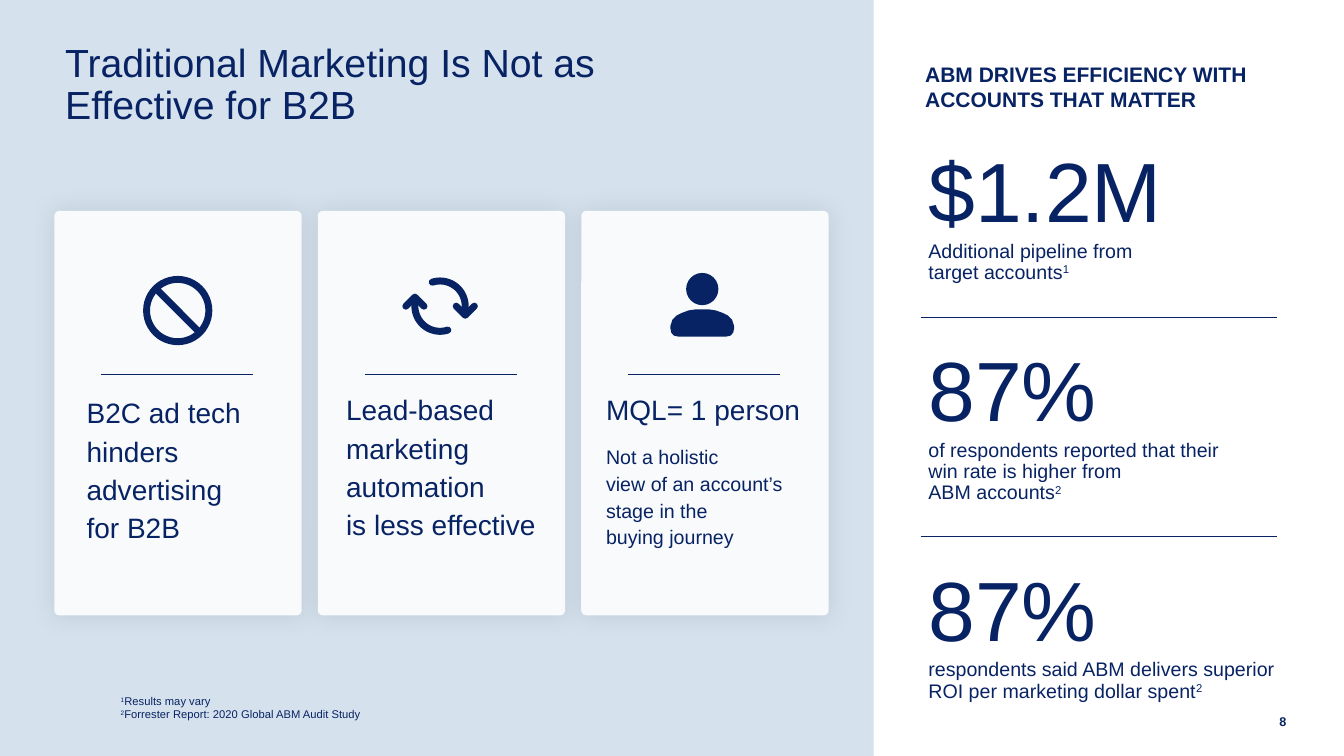
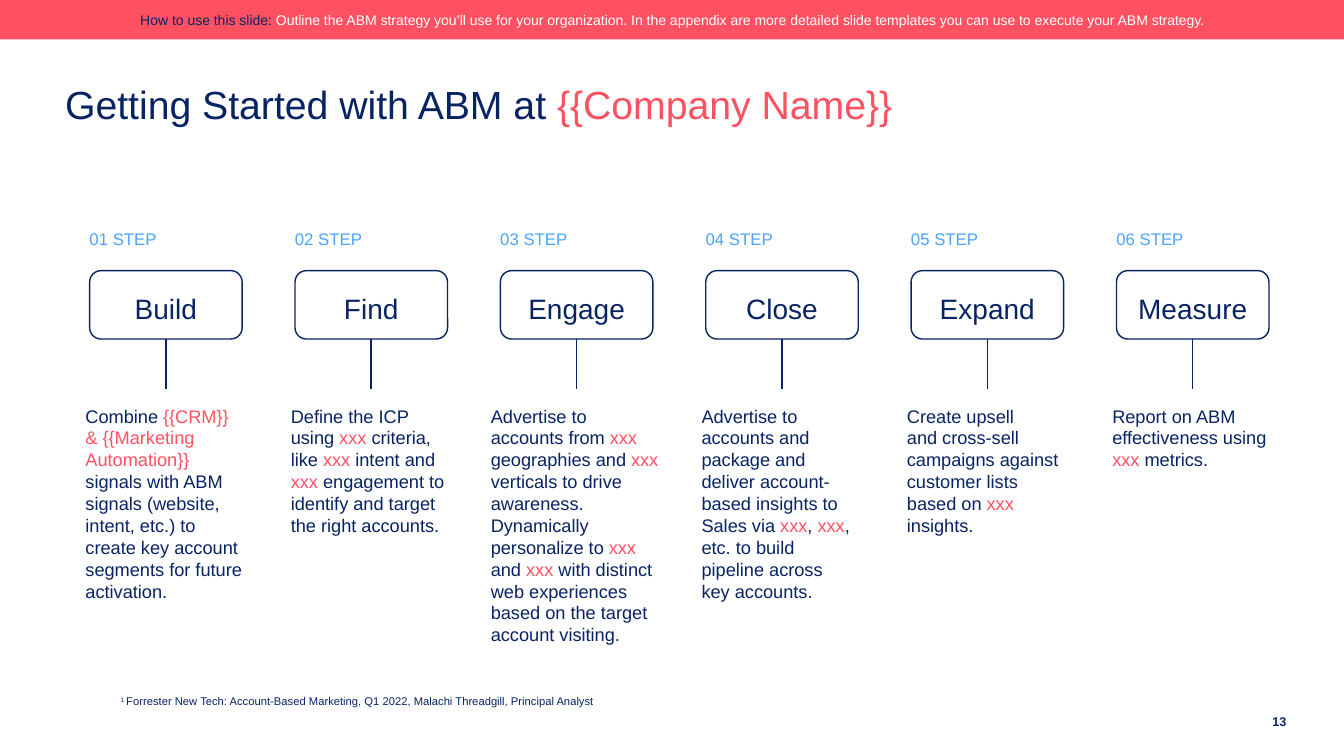
import math
import pptx
import pptx.util
import pptx.dml.color
import pptx.enum.shapes
import pptx.enum.text
import pptx.oxml

Pt = pptx.util.Pt
RGB = pptx.dml.color.RGBColor.from_string
Kind = pptx.enum.shapes.MSO_SHAPE
Align = pptx.enum.text.PP_ALIGN
Anchor = pptx.enum.text.MSO_ANCHOR

HUES = {
    "navy": "082364",
    "coral": "FF5161",
    "sky": "4CA3FF",
    "mist": "D5E1EC",
    "card": "F8FAFC",
    "white": "FFFFFF",
    "shade": "253E57",
}
FONT = "Arial"
NS = 'xmlns:a="http://schemas.openxmlformats.org/drawingml/2006/main"'

deck = pptx.Presentation()
deck.slide_width = pptx.util.Inches(13.33)
deck.slide_height = pptx.util.Inches(7.5)
COL = deck.slide_width / 100
ROW = deck.slide_height / 100


def add(page, kind, x, y, w, h, fill=None, line=None):
    x, w = round(x * COL), round(w * COL)
    y, h = round(y * ROW), round(h * ROW)
    if kind == "text":
        return page.shapes.add_textbox(x, y, w, h)
    if kind == "line":
        rule = page.shapes.add_connector(
            pptx.enum.shapes.MSO_CONNECTOR.STRAIGHT, x, y, x + w, y + h)
        rule._element.spPr.append(pptx.oxml.parse_xml(f"<a:effectLst {NS}/>"))
        rule.line.color.rgb = RGB(HUES["navy"])
        rule.line.width = Pt(line)
        return rule
    shape = page.shapes.add_shape(kind, x, y, w, h)
    shape.shadow.inherit = False
    shape.fill.solid()
    shape.fill.fore_color.rgb = RGB(HUES[fill])
    if line:
        shape.line.color.rgb = RGB(HUES["navy"])
        shape.line.width = Pt(line)
    else:
        shape.line.fill.background()
    return shape


def write(text, box, size=14, hue="navy", alt="coral", bold=False, align=Align.LEFT,
          anchor=Anchor.TOP, ins=(7.2, 3.6, 7.2, 3.6), space=1.0, before=0, after=0):
    frame = box.text_frame
    frame.word_wrap = True
    frame.auto_size = pptx.enum.text.MSO_AUTO_SIZE.NONE
    frame.vertical_anchor = anchor
    frame.margin_left, frame.margin_top, frame.margin_right, frame.margin_bottom = map(Pt, ins)
    para = frame.add_paragraph() if frame.text else frame.paragraphs[0]
    para.alignment = align
    para.line_spacing = space
    para.space_before, para.space_after = Pt(before), Pt(after)
    for i, part in enumerate(text.split("|")):
        for j, words in enumerate(part.split("\n")):
            if j:
                para.add_line_break()
            if not words:
                continue
            run = para.add_run()
            run.text = words
            font = run.font
            font.name, font.size, font.bold = FONT, Pt(size), bold
            font.color.rgb = RGB(HUES[alt if i % 2 and alt != "sup" else hue])
            if i % 2 and alt == "sup":
                font._element.set("baseline", "30000")


EVEN = (7.2,) * 4
WIDE = (9.4,) * 4

PAGES = [
    ("Traditional Marketing Is Not as Effective for B2B", 42.4, "8",
     ["|1|Results may vary", "|2|Forrester Report: 2020 Global ABM Audit Study"]),
    ("Getting Started with ABM at |{{Company Name}}", 88.5, "13",
     ["|1 |Forrester New Tech: Account-Based Marketing, Q1 2022, "
      "Malachi Threadgill, Principal Analyst"]),
]
pages = []
for title, width, num, notes in PAGES:
    page = deck.slides.add_slide(deck.slide_layouts[5])
    pages.append(page)
    head = page.shapes.title
    head.left, head.top = round(4.1 * COL), round(1.6 * ROW)
    head.width, head.height = round(width * COL), round(16.7 * ROW)
    write(title, head, size=28, space=0.9, anchor=Anchor.BOTTOM, ins=EVEN)
    box = add(page, "text", 92.1, 91.5, 4.35, 7.6)
    write(num, box, size=9, bold=True, align=Align.RIGHT, anchor=Anchor.MIDDLE, space=1.15)
    box = add(page, "text", 8, 90.1, 53.1, 4 + 2.5 * len(notes))
    for note in notes:
        write(note, box, size=8, alt="sup", ins=WIDE)

why, plan = pages

panel = add(why, Kind.RECTANGLE, 0, 0, 65, 100, "mist")
why.shapes._spTree.insert(2, panel._element)

CARDS = [
    (1.5, 51.1, 15.4, "B2C ad tech\nhinders advertising\nfor B2B", ""),
    (1.2, 50.7, 16, "Lead-based\nmarketing automation\nis less effective", ""),
    (0.95, 50.7, 16.4, "MQL= 1 person",
     "Not a holistic \nview of an account’s stage in the \nbuying journey"),
]
for i, (shift, top, width, lead, more) in enumerate(CARDS):
    left = 4.05 + 19.6 * i
    card = add(why, Kind.ROUNDED_RECTANGLE, left, 27.9, 18.4, 53.5, "card")
    card.adjustments[0] = 0.02
    glow = card._element.spPr.find(pptx.oxml.ns.qn("a:effectLst"))
    glow.append(pptx.oxml.parse_xml(
        f'<a:outerShdw {NS} blurRad="{Pt(17)}" dist="0" dir="0" algn="ctr" rotWithShape="0">'
        f'<a:srgbClr val="{HUES["shade"]}"><a:alpha val="12000"/></a:srgbClr></a:outerShdw>'))
    add(why, "line", left + 3.5, 49.5, 11.3, 0, line=0.75)
    box = add(why, "text", left + shift, top, width, 7.6)
    trim = (8.6, 3.6, 8.6, 3.6)
    write(lead, box, size=20, space=1.14, ins=trim)
    if more:
        write(more, box, space=1.14, before=10.7, ins=trim)

ban = add(why, Kind.NO_SYMBOL, 10.65, 36.5, 5.15, 9.16, "navy")
ban.adjustments[0] = 0.1

for turn in (1, -1):
    arc = [(3.33 * math.cos(math.radians(a)), 3.33 * math.sin(math.radians(a)))
           for a in range(-108, 1, 6)]
    strokes = [arc + [(3.33, 1.1)], [(2.13, 0), (3.33, 1.2), (4.53, 0)]]
    for stroke in strokes:
        dots = [(round((58.2 + turn * x) * ROW), round((40.5 + turn * y) * ROW))
                for x, y in stroke]
        pen = why.shapes.build_freeform(*dots[0])
        pen.add_line_segments(dots[1:], close=False)
        mark = pen.convert_to_shape()
        mark.shadow.inherit = False
        mark.fill.background()
        mark.line.color.rgb = RGB(HUES["navy"])
        mark.line.width = Pt(5)
        edge = mark.line._get_or_add_ln()
        edge.set("cap", "rnd")
        edge.append(pptx.oxml.parse_xml(f"<a:round {NS}/>"))

add(why, Kind.OVAL, 51.05, 36.1, 2.4, 4.27, "navy")
half = [(0, 40.93), (1, 40.95), (1.8, 41.07), (2.7, 41.4), (3.4, 41.75), (3.95, 42.3),
        (4.2, 43.1), (4.2, 43.5), (4.1, 44), (3.75, 44.4), (3.15, 44.53)]
dots = [(round((92.87 + x) * ROW), round(y * ROW))
        for x, y in half + [(-x, y) for x, y in reversed(half)]]
pen = why.shapes.build_freeform(*dots[0])
pen.add_line_segments(dots[1:])
bust = pen.convert_to_shape()
bust.shadow.inherit = False
bust.fill.solid()
bust.fill.fore_color.rgb = RGB(HUES["navy"])
bust.line.fill.background()

box = add(why, "text", 68.1, 7.5, 26.9, 8.1)
write("ABM DRIVES EFFICIENCY WITH ACCOUNTS THAT MATTER", box, size=15, bold=True)
STATS = [
    (15.6, 26.9, "$1.2M", "Additional pipeline from \ntarget accounts|1"),
    (41.95, 24, "87%",
     "of respondents reported that their win rate is higher from \nABM accounts|2"),
    (70.95, 29.4, "87%",
     "respondents said ABM delivers superior ROI per marketing dollar spent|2"),
]
for i, (top, width, value, label) in enumerate(STATS):
    if i:
        add(why, "line", 68.5, top, 26.5, 0, line=0.75)
    box = add(why, "text", 68.1, top, 27.1, 18.8)
    write(value, box, size=60, anchor=Anchor.MIDDLE, ins=WIDE, after=9.3)
    box = add(why, "text", 68.1, top + 14.6, width, 8.4)
    write(label, box, alt="sup", space=0.9, ins=WIDE)

band = add(plan, Kind.RECTANGLE, 0, 0, 100, 5.2, "coral")
write("|How to use this slide: |Outline the ABM strategy you’ll use for your organization. "
      "In the appendix are more detailed slide templates you can use to execute your "
      "ABM strategy.", band, size=10, hue="white", alt="navy", align=Align.CENTER,
      anchor=Anchor.MIDDLE, ins=EVEN)

STEPS = [
    ("Build", "Combine |{{CRM}} & {{Marketing Automation}} |signals with ABM signals "
     "(website, intent, etc.) to create key account segments for future activation."),
    ("Find", "Define the ICP using |xxx| criteria, like |xxx| intent and |xxx| engagement "
     "to identify and target the right accounts."),
    ("Engage", "Advertise to accounts from |xxx| geographies and |xxx| verticals to drive "
     "awareness. Dynamically personalize to |xxx| and |xxx| with distinct web experiences "
     "based on the target account visiting."),
    ("Close", "Advertise to accounts and package and deliver account-based insights to "
     "Sales via |xxx|, |xxx|, etc. to build pipeline across \nkey accounts."),
    ("Expand", "Create upsell \nand cross-sell campaigns against customer lists based on "
     "|xxx| insights."),
    ("Measure", "Report on ABM effectiveness using |xxx| metrics."),
]
LOW = (7.2, 0, 7.2, 7.2)
for i, (name, text) in enumerate(STEPS):
    left = 6.67 + 15.28 * i
    box = add(plan, "text", left - 0.75, 27.6, 13.4, 8)
    write(f"{i + 1:02} STEP", box, size=12, hue="sky", anchor=Anchor.MIDDLE, ins=LOW, space=1.5)
    tile = add(plan, Kind.ROUNDED_RECTANGLE, left, 35.8, 11.35, 9.05, "white", 1)
    write(name, tile, size=20, align=Align.CENTER, anchor=Anchor.MIDDLE, ins=LOW, space=1.5)
    add(plan, "line", left + 5.67, 44.85, 0, 6.6, line=1)
    nudge, width = (0.4, 14.25) if name == "Engage" else (0, 13.4)
    box = add(plan, "text", left - 1.05 - nudge, 52.9, width, 11.7)
    write(text, box, size=13)

deck.save("out.pptx")
